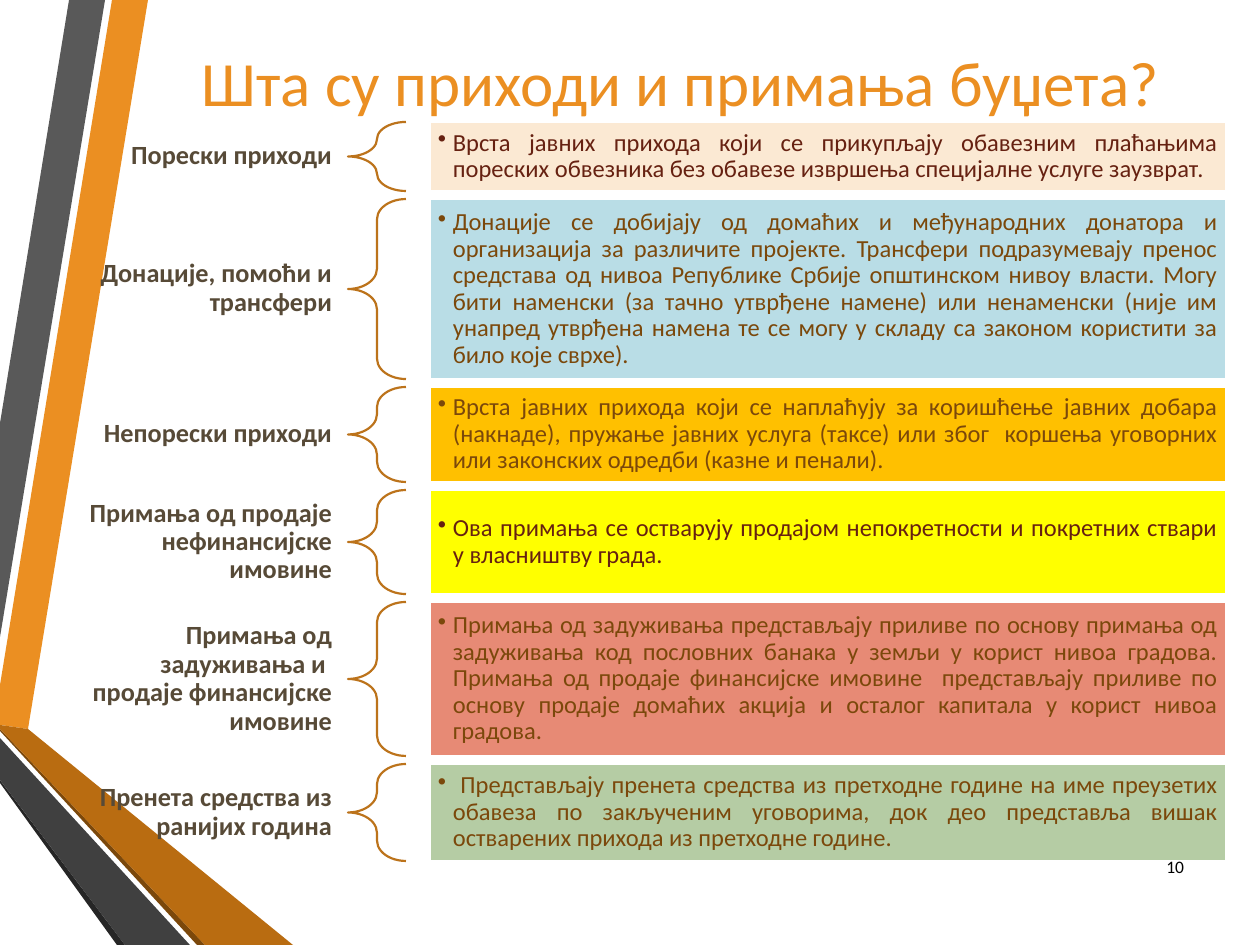
"""Builds the slide on budget revenues and receipts."""
from lxml import etree
from pptx import Presentation
from pptx import util as u
from pptx.dml.color import RGBColor
from pptx.enum import shapes, text
from pptx.oxml.ns import qn

COLORS = {
    "orange": "EB8F22", "gray": "595959", "black": "262626", "brown": "7B480B",
    "rust": "B96C11", "charcoal": "404040", "label": "574A37", "brace": "BC731B",
    "maroon": "662111", "white": "FFFFFF", "cream": "FBE9D3", "blue": "B9DDE6",
    "amber": "FFC000", "yellow": "FFFF00", "coral": "E78A75", "green": "B5CCA4",
    "number": "000000",
}

RIBBONS = [
    ("orange", [(0, 685), (0, 725), (28, 729), (148, 0), (112, 0)]),
    ("gray", [(105, 0), (69, 0), (0, 423), (0, 637)]),
    ("black", [(0, 780), (0, 783), (117, 945), (125, 945)]),
    ("brown", [(0, 729), (0, 731), (197, 945), (205, 945)]),
    ("rust", [(0, 729), (205, 945), (293, 945), (28, 729), (0, 725)]),
    ("charcoal", [(0, 780), (125, 945), (190, 945), (0, 738)]),
]

ROWS = [
    (69, 44, "cream", "maroon", "Порески приходи",
     "Врста јавних прихода који се прикупљају обавезним плаћањима пореских "
     "обвезника без обавезе извршења специјалне услуге заузврат."),
    (180, 73, "blue", "brown", "Донације, помоћи и трансфери",
     "Донације се добијају од домаћих и међународних донатора и организација "
     "за различите пројекте. Трансфери подразумевају пренос средстава од нивоа "
     "Републике Србије општинском нивоу власти. Могу бити наменски (за тачно "
     "утврђене намене) или ненаменски (није им унапред утврђена намена те се "
     "могу у складу са законом користити за било које сврхе)."),
    (95, 44, "amber", "brown", "Непорески приходи",
     "Врста јавних прихода који се наплаћују за коришћење јавних добара "
     "(накнаде), пружање јавних услуга (таксе) или због  коршења уговорних "
     "или законских одредби (казне и пенали)."),
    (104, 104, "yellow", "maroon", "Примања од продаје нефинансијске имовине",
     "Ова примања се остварују продајом непокретности и покретних ствари у "
     "власништву града."),
    (154, 136, "coral", "brown",
     "Примања од задуживања и  продаје финансијске имовине",
     "Примања од задуживања представљају приливе по основу примања од "
     "задуживања код пословних банака у земљи у корист нивоа градова. Примања "
     "од продаје финансијске имовине  представљају приливе по основу продаје "
     "домаћих акција и осталог капитала у корист нивоа градова."),
    (97, 73, "green", "brown", "Пренета средства из ранијих година",
     " Представљају пренета средства из претходне године на име преузетих "
     "обавеза по закљученим уговорима, док део представља вишак остварених "
     "прихода из претходне године."),
]
TOP, GAP = 122, 8


class Deck:
    """Holds the style and the current slide."""
    font = "Calibri"
    scale = 914400 / 126

    def __init__(self, width, height):
        self.prs = Presentation()
        self.prs.slide_width, self.prs.slide_height = self.emu(width, height)
        self.s = self.prs.slides.add_slide(self.prs.slide_layouts[6])

    def emu(self, *lengths):
        return [u.Emu(round(n * self.scale)) for n in lengths]

    def color(self, name):
        return RGBColor.from_string(COLORS[name])

    def paint(self, sp, fill=None, line=None):
        sp.shadow.inherit = False
        if fill:
            sp.fill.solid()
            sp.fill.fore_color.rgb = self.color(fill)
        else:
            sp.fill.background()
        if line:
            sp.line.color.rgb = self.color(line)
            sp.line.width = u.Pt(1.25)
        else:
            sp.line.fill.background()

    def add_text(self, sp, words, size, color, align, insets, bold=False, spacing=1.0):
        tf = sp.text_frame
        tf.word_wrap = True
        tf.vertical_anchor = text.MSO_ANCHOR.MIDDLE
        across, down = self.emu(*insets)
        tf.margin_left = tf.margin_right = across
        tf.margin_top = tf.margin_bottom = down
        p = tf.paragraphs[0]
        p.alignment = align
        p.line_spacing = spacing
        r = p.add_run()
        r.text = words
        r.font.name, r.font.size, r.font.bold = self.font, u.Pt(size), bold
        r.font.color.rgb = self.color(color)
        return p

    def ribbon(self, color, points):
        fb = self.s.shapes.build_freeform(*points[0], scale=self.scale)
        fb.add_line_segments(points[1:], close=True)
        self.paint(fb.convert_to_shape(), color)

    def textbox(self, box, words, size, color, align, insets=(13, 6), **style):
        sp = self.s.shapes.add_textbox(*self.emu(*box))
        self.add_text(sp, words, size, color, align, insets, **style)

    def brace(self, box):
        sp = self.s.shapes.add_shape(shapes.MSO_SHAPE.LEFT_BRACE, *self.emu(*box))
        sp.adjustments[0], sp.adjustments[1] = 0.35, 0.5
        self.paint(sp, line="brace")

    def panel(self, box, fill, words, color):
        sp = self.s.shapes.add_shape(shapes.MSO_SHAPE.RECTANGLE, *self.emu(*box))
        self.paint(sp, fill, "white")
        p = self.add_text(sp, words, 14, color, text.PP_ALIGN.JUSTIFY, (8, 8), spacing=0.9)
        p.level = 1
        indent, = self.emu(15)
        pPr = p._p.get_or_add_pPr()
        pPr.set("marL", str(indent))
        pPr.set("indent", str(-indent))
        etree.SubElement(pPr, qn("a:buChar")).set("char", "•")


def main():
    deck = Deck(1260, 945)
    for color, points in RIBBONS:
        deck.ribbon(color, points)
    deck.textbox((164, 38, 1033, 86), "Шта су приходи и примања буџета?", 36,
                 "orange", text.PP_ALIGN.CENTER)
    top = TOP
    for height, label_height, fill, color, label, body in ROWS:
        label_top = top + (height - label_height) // 2
        deck.textbox((55, label_top, 292, label_height), label, 15, "label",
                     text.PP_ALIGN.RIGHT, (15, 5), bold=True, spacing=0.9)
        deck.brace((348, top, 58, height))
        deck.panel((430, top, 796, height), fill, body, color)
        top += height + GAP
    deck.textbox((1138, 842, 59, 50), "10", 10, "number", text.PP_ALIGN.RIGHT)
    deck.prs.save("out.pptx")


if __name__ == "__main__":
    main()
